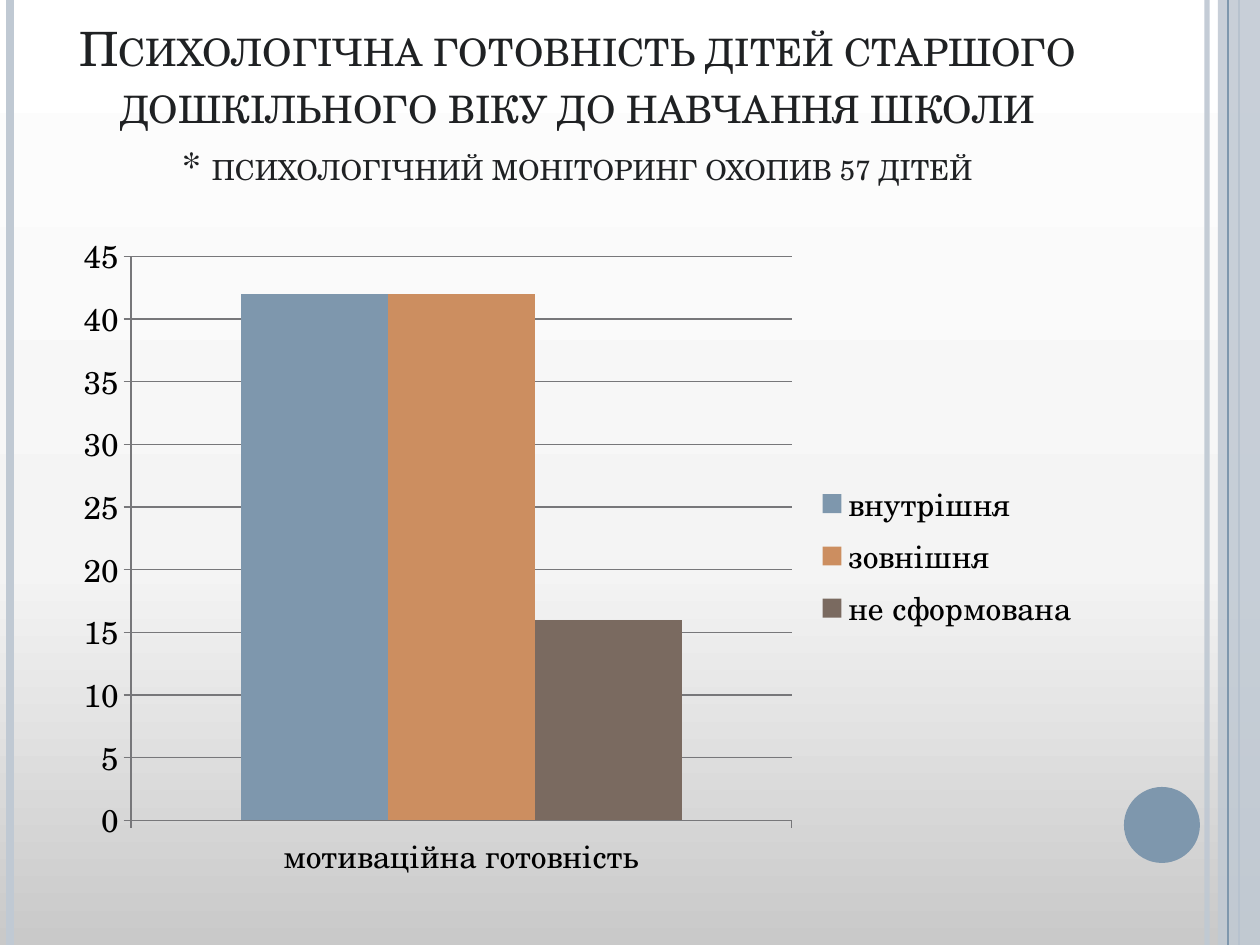
from copy import deepcopy
from dataclasses import dataclass

from lxml.etree import SubElement
from pptx import Presentation
from pptx.chart.data import CategoryChartData
from pptx.dml.color import RGBColor
from pptx.enum.chart import XL_CHART_TYPE, XL_LEGEND_POSITION, XL_TICK_MARK
from pptx.enum.shapes import MSO_CONNECTOR, MSO_SHAPE
from pptx.enum.text import MSO_ANCHOR, PP_ALIGN
from pptx.oxml.ns import qn
from pptx.util import Emu, Pt

PX = 914400 / 126
WIDTH, HEIGHT = 1260, 945


@dataclass(frozen=True)
class Theme:
    font: str = "TeX Gyre Schola"
    title: str = "1F2123"
    chart_text: str = "000000"
    grid: str = "77777A"
    pale: str = "C0C9D3"
    blue: str = "7E97AD"
    orange: str = "CC8E60"
    brown: str = "7A6A60"
    background: tuple = ((0, "C9C9C9"), (40, "F4F4F4"), (100, "FFFFFF"))
    title_size: float = 27
    note_size: float = 19.8
    chart_size: float = 18


THEME = Theme()


def px(*lengths):
    return [Emu(round(length * PX)) for length in lengths]


def apply_format(target, values):
    for name, value in values.items():
        setattr(target, name, value)


def rgb(value):
    return RGBColor.from_string(value)


def set_alpha(properties, percent):
    color = next(properties.iter(qn("a:srgbClr")))
    SubElement(color, qn("a:alpha")).set("val", str(percent * 1000))


def paint_background(page):
    fill = page.background.fill
    fill.gradient()
    fill.gradient_angle = 90  # upwards from the bottom edge
    stop_list = next(page.background._cSld.iter(qn("a:gsLst")))
    stop_list.append(deepcopy(stop_list[-1]))
    for stop, (position, color) in zip(fill.gradient_stops, THEME.background):
        stop.position = position / 100
        stop.color.rgb = rgb(color)


def add_stripe(page, x, color, width, alpha=100):
    """Full-height vertical line."""
    line = page.shapes.add_connector(MSO_CONNECTOR.STRAIGHT, *px(x, 0, x, HEIGHT))
    line.line.color.rgb = rgb(color)
    line.line.width = Pt(width)
    properties = line._element.spPr
    if alpha < 100:
        set_alpha(properties, alpha)
    SubElement(properties, qn("a:effectLst"))


def add_solid(page, kind, bounds, color, alpha=100):
    shape = page.shapes.add_shape(kind, *px(*bounds))
    shape.shadow.inherit = False
    shape.fill.solid()
    shape.fill.fore_color.rgb = rgb(color)
    shape.line.fill.background()
    if alpha < 100:
        set_alpha(shape._element.spPr, alpha)


def add_span(para, text, size):
    span = para.add_run()
    span.text = text
    apply_format(span.font, {"name": THEME.font, "size": Pt(size)})
    span.font.color.rgb = rgb(THEME.title)
    span._r.get_or_add_rPr().set("cap", "small")


def add_title(page, bounds, heading, note):
    box = page.shapes.add_textbox(*px(*bounds))
    frame = box.text_frame
    apply_format(frame, {"word_wrap": True, "vertical_anchor": MSO_ANCHOR.BOTTOM})
    para = frame.paragraphs[0]
    para.alignment = PP_ALIGN.CENTER
    add_span(para, heading, THEME.title_size)
    para.add_line_break()
    add_span(para, "* ", THEME.title_size)
    add_span(para, note, THEME.note_size)


def style_axis(axis):
    apply_format(axis, {"major_tick_mark": XL_TICK_MARK.OUTSIDE,
                        "minor_tick_mark": XL_TICK_MARK.NONE})
    style_rule(axis.format.line)


def style_rule(line):
    line.color.rgb = rgb(THEME.grid)
    line.width = Pt(0.75)


def add_column_chart(page, bounds, category, series):
    data = CategoryChartData()
    data.categories = [category]
    for name, value, _ in series:
        data.add_series(name, [value])
    chart = page.shapes.add_chart(
        XL_CHART_TYPE.COLUMN_CLUSTERED, *px(*bounds), data).chart
    apply_format(chart, {"has_title": False, "has_legend": True})
    apply_format(chart.font, {"name": THEME.font, "size": Pt(THEME.chart_size)})
    chart.font.color.rgb = rgb(THEME.chart_text)
    apply_format(chart.legend, {"position": XL_LEGEND_POSITION.RIGHT,
                                "include_in_layout": False})

    # Axes and gridlines
    for axis in (chart.category_axis, chart.value_axis):
        style_axis(axis)
    apply_format(chart.value_axis, {"minimum_scale": 0, "maximum_scale": 45,
                                    "major_unit": 5, "has_major_gridlines": True})
    style_rule(chart.value_axis.major_gridlines.format.line)

    # Columns
    plot = chart.plots[0]
    apply_format(plot, {"gap_width": 150, "overlap": 0, "vary_by_categories": False})
    for columns, (_, _, color) in zip(plot.series, series):
        columns.format.fill.solid()
        columns.format.fill.fore_color.rgb = rgb(color)


def main():
    deck = Presentation()
    deck.slide_width, deck.slide_height = px(WIDTH, HEIGHT)
    page = deck.slides.add_slide(deck.slide_layouts[6])
    paint_background(page)

    # Side decoration
    add_stripe(page, 1207, THEME.pale, 3, alpha=93)
    add_stripe(page, 10, THEME.pale, 4.5)
    add_stripe(page, 1239, THEME.blue, 1.5)
    add_solid(page, MSO_SHAPE.RECTANGLE, (1218, 0, 42, HEIGHT), THEME.pale, alpha=87)
    add_stripe(page, 1228, THEME.blue, 0.75)
    add_solid(page, MSO_SHAPE.OVAL, (1124, 787, 76, 76), THEME.blue)

    # Heading
    add_title(page, (63, 38, 1029, 158),
              "Психологічна готовність дітей старшого дошкільного віку до навчання школи",
              "психологічний моніторинг охопив 57 дітей")

    # Motivation results
    add_column_chart(page, (63, 220, 1029, 672), "мотиваційна готовність", [
        ("внутрішня", 42, THEME.blue),
        ("зовнішня", 42, THEME.orange),
        ("не сформована", 16, THEME.brown),
    ])
    deck.save("out.pptx")


if __name__ == "__main__":
    main()
